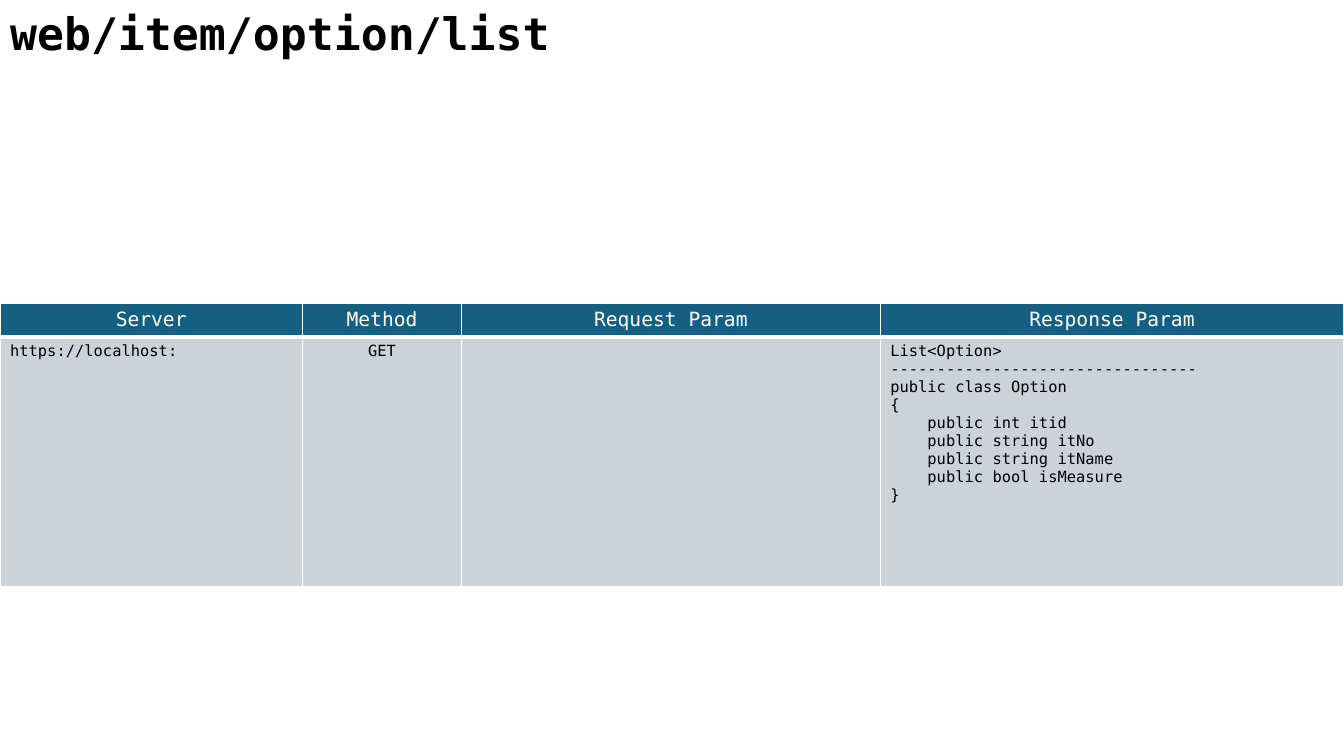
import pptx
import pptx.dml.color
import pptx.enum.text
import pptx.oxml
import pptx.oxml.ns
import pptx.util

Inches = pptx.util.Inches
Pt = pptx.util.Pt
LEFT = pptx.enum.text.PP_ALIGN.LEFT
CENTER = pptx.enum.text.PP_ALIGN.CENTER

# Content
TITLE = "web/item/option/list"
HEADERS = ["Server", "Method", "Request Param", "Response Param"]
RESPONSE = """List<Option>
---------------------------------
public class Option
{
    public int itid
    public string itNo
    public string itName
    public bool isMeasure
}"""
VALUES = ["https://localhost:", "GET", "", RESPONSE]
VALUE_ALIGNMENTS = [LEFT, CENTER, LEFT, LEFT]

COLUMN_WIDTHS = [3, 1.58, 4.15, 4.6]
ROW_HEIGHTS = [0.33, 2.48]
TABLE_TOP = 3.01

THEME = {
    "font": "DejaVu Sans Mono",
    "text": "000000",
    "header_text": "FFFFFF",
    "header_fill": "156082",
    "body_fill": "CCD2D8",
    "border": "FFFFFF",
    "title_size": 32,
    "header_size": 14,
    "body_size": 11,
}


def rgb(name):
    return pptx.dml.color.RGBColor.from_string(THEME[name])


def format_paragraph(paragraph, size, color, alignment, bold=False):
    paragraph.alignment = alignment
    paragraph.font.name = THEME["font"]
    paragraph.font.size = Pt(THEME[size])
    paragraph.font.color.rgb = rgb(color)
    paragraph.font.bold = bold


def add_borders(cell, bottom_width):
    """Draw the four cell edges; they must precede the fill in the XML."""
    properties = cell._tc.get_or_add_tcPr()
    for side, width in (("L", 1), ("R", 1), ("T", 1), ("B", bottom_width)):
        properties.append(pptx.oxml.parse_xml(
            f'<a:ln{side} {pptx.oxml.ns.nsdecls("a")} w="{Pt(width)}">'
            f'<a:solidFill><a:srgbClr val="{THEME["border"]}"/></a:solidFill>'
            f'</a:ln{side}>'))


def fill_row(table, row, texts, alignments, kind, text_color, bottom_width):
    for column, (text, alignment) in enumerate(zip(texts, alignments)):
        cell = table.cell(row, column)
        add_borders(cell, bottom_width)
        cell.fill.solid()
        cell.fill.fore_color.rgb = rgb(f"{kind}_fill")
        cell.text = text
        for paragraph in cell.text_frame.paragraphs:
            format_paragraph(paragraph, f"{kind}_size", text_color, alignment)


def main():
    presentation = pptx.Presentation()
    presentation.slide_width = Inches(13.33)
    presentation.slide_height = Inches(7.5)
    slide = presentation.slides.add_slide(presentation.slide_layouts[5])

    # Title
    title = slide.shapes.title
    title.left, title.top = Inches(0), Inches(0)
    title.width, title.height = Inches(9.45), Inches(0.64)
    title.text_frame.text = TITLE
    title.text_frame.auto_size = pptx.enum.text.MSO_AUTO_SIZE.SHAPE_TO_FIT_TEXT
    format_paragraph(title.text_frame.paragraphs[0], "title_size", "text", LEFT, bold=True)

    # Endpoint table
    table = slide.shapes.add_table(
        len(ROW_HEIGHTS), len(COLUMN_WIDTHS), Inches(0), Inches(TABLE_TOP),
        Inches(sum(COLUMN_WIDTHS)), Inches(sum(ROW_HEIGHTS))).table
    for column, width in zip(table.columns, COLUMN_WIDTHS):
        column.width = Inches(width)
    for row, height in zip(table.rows, ROW_HEIGHTS):
        row.height = Inches(height)
    fill_row(table, 0, HEADERS, [CENTER] * len(HEADERS), "header", "header_text", 3)
    fill_row(table, 1, VALUES, VALUE_ALIGNMENTS, "body", "text", 1)

    presentation.save("out.pptx")


if __name__ == "__main__":
    main()
